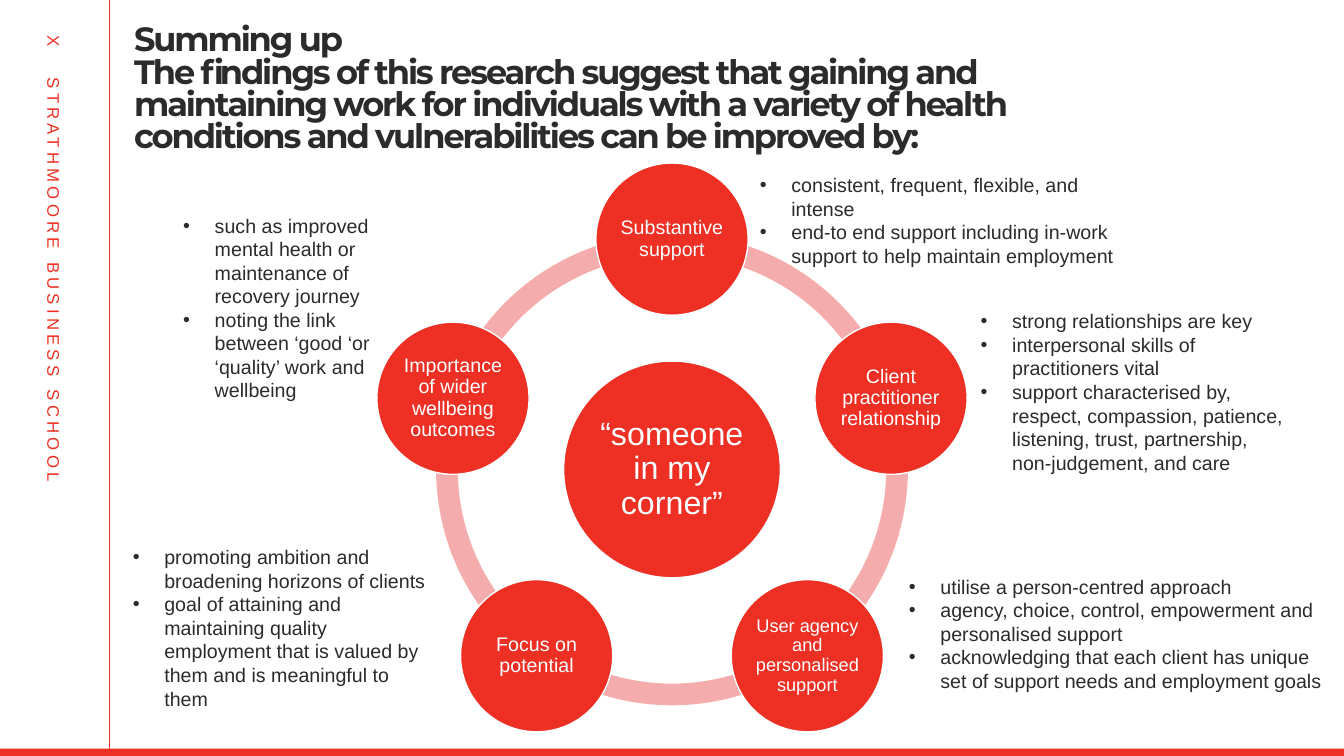
import math
from dataclasses import dataclass

from lxml import etree
from pptx import Presentation
from pptx import util as u
from pptx.dml.color import RGBColor
from pptx.enum import shapes, text
from pptx.oxml import ns

RED = RGBColor(0xED, 0x2F, 0x24)
BRAND_RED = RGBColor(0xEE, 0x30, 0x24)
PINK = RGBColor(0xF4, 0xAD, 0xAC)
WHITE = RGBColor(0xFC, 0xFF, 0xFF)
DARK = RGBColor(0x2B, 0x2B, 0x2B)

WIDTH, HEIGHT = 960, 540
CENTER_X, CENTER_Y = 480, 335.3
ORBIT_RADIUS = 164.5
NODE_SIZE, HUB_SIZE, RING_SIZE = 108.7, 154.8, 337
RING_THICKNESS = 0.046
ANGLE_UNIT = 0.6
BULLET_INDENT = 22.5


@dataclass(frozen=True)
class Factor:
    label: str
    label_size: float
    left: float
    top: float
    width: float
    height: float
    details: tuple[str, ...]


FACTORS = (
    Factor("Substantive support", 14, 535.7, 120.2, 282.2, 113.8, (
        "consistent, frequent, flexible, and intense",
        "end-to end support including in-work support to help maintain employment",
    )),
    Factor("Client practitioner relationship", 14, 693.4, 217.4, 235.4, 147.6, (
        "strong relationships are key",
        "interpersonal skills of practitioners vital",
        "support characterised by, respect, compassion, patience, listening, "
        "trust, partnership, non-judgement, and care",
    )),
    Factor("User agency and personalised support", 13, 642.2, 406.8, 312.5, 113.8, (
        "utilise a person-centred approach",
        "agency, choice, control, empowerment and personalised support",
        "acknowledging that each client has unique set of support needs "
        "and employment goals",
    )),
    Factor("Focus on potential", 14, 87.8, 385.9, 229.7, 147.6, (
        "promoting ambition and broadening horizons of clients",
        "goal of attaining and maintaining quality employment that is valued "
        "by them and is meaningful to them",
    )),
    Factor("Importance of wider wellbeing outcomes", 14, 123.8, 149, 167, 164.9, (
        "such as improved mental health or maintenance of recovery journey",
        "noting the link between ‘good ‘or ‘quality’ work and wellbeing",
    )),
)


def write_text(shape, *lines: str, size: float, color: RGBColor, font: str = "Arial",
               bold: bool = False, align=text.PP_ALIGN.LEFT,
               anchor=text.MSO_ANCHOR.TOP, line_spacing: float | None = None,
               letter_spacing: float = 0, bullets: bool = False,
               tab_stop: float | None = None,
               margins: tuple[float, float, float, float] = (7.2, 3.6, 7.2, 3.6)) -> None:
    frame = shape.text_frame
    frame.word_wrap = True
    frame.vertical_anchor = anchor
    (frame.margin_left, frame.margin_top,
     frame.margin_right, frame.margin_bottom) = map(u.Pt, margins)
    for index, line in enumerate(lines):
        paragraph = frame.add_paragraph() if index else frame.paragraphs[0]
        paragraph.text = line
        paragraph.alignment = align
        if line_spacing:
            paragraph.line_spacing = line_spacing
        properties = paragraph._p.get_or_add_pPr()
        if bullets:
            properties.set("marL", str(u.Pt(BULLET_INDENT)))
            properties.set("indent", str(-u.Pt(BULLET_INDENT)))
            etree.SubElement(properties, ns.qn("a:buFont"), typeface="Arial")
            etree.SubElement(properties, ns.qn("a:buChar"), char="•")
        if tab_stop:
            tabs = etree.SubElement(properties, ns.qn("a:tabLst"))
            etree.SubElement(tabs, ns.qn("a:tab"), pos=str(u.Pt(tab_stop)), algn="l")
        for run in paragraph.runs:
            run.font.name = font
            run.font.size = u.Pt(size)
            run.font.bold = bold
            run.font.color.rgb = color
            if letter_spacing:
                run._r.get_or_add_rPr().set("spc", str(round(letter_spacing * 100)))


def add_box(slide, left: float, top: float, width: float, height: float):
    return slide.shapes.add_textbox(*map(u.Pt, (left, top, width, height)))


def add_filled(slide, kind, left: float, top: float, width: float, height: float,
               fill: RGBColor, outline: RGBColor | None = None):
    shape = slide.shapes.add_shape(kind, *map(u.Pt, (left, top, width, height)))
    shape.shadow.inherit = False
    shape.fill.solid()
    shape.fill.fore_color.rgb = fill
    if outline is None:
        shape.line.fill.background()
    else:
        shape.line.color.rgb = outline
        shape.line.width = u.Pt(1)
    return shape


def add_circle(slide, x: float, y: float, diameter: float, label: str,
               size: float, margin: float) -> None:
    circle = add_filled(slide, shapes.MSO_SHAPE.OVAL, x - diameter / 2,
                        y - diameter / 2, diameter, diameter, RED, WHITE)
    write_text(circle, label, size=size, color=WHITE, align=text.PP_ALIGN.CENTER,
               anchor=text.MSO_ANCHOR.MIDDLE, line_spacing=0.9, margins=(margin,) * 4)


def add_frame(slide) -> None:
    rule = slide.shapes.add_connector(shapes.MSO_CONNECTOR.STRAIGHT,
                                      u.Pt(77.8), u.Pt(0), u.Pt(77.8), u.Pt(HEIGHT))
    rule.line.color.rgb = BRAND_RED
    rule.line.width = u.Pt(0.5)
    etree.SubElement(rule._element.spPr, ns.qn("a:effectLst"))
    school = add_box(slide, -165.6, 211.7, 408.2, 21.6)
    school.rotation = 90
    write_text(school, "X\tSTRATHMOORE BUSINESS SCHOOL", size=12, color=BRAND_RED,
               letter_spacing=3, tab_stop=30)
    add_filled(slide, shapes.MSO_SHAPE.RECTANGLE, -0.5, 534.7, WIDTH + 1, 6.3, RED)
    title = add_box(slide, 95.8, 3.6, 661.7, 99.4)
    write_text(title,
               "Summing up\vThe findings of this research suggest that gaining and "
               "maintaining work for individuals with a variety of health conditions "
               "and vulnerabilities can be improved by:",
               size=24, color=DARK, font="Montserrat", bold=True, line_spacing=0.8,
               letter_spacing=-1.5, margins=(0, 15.1, 0, 0))


def add_cycle(slide) -> None:
    step = 360 / len(FACTORS)
    for index in range(len(FACTORS)):
        start = (270 + index * step) % 360
        arc = add_filled(slide, shapes.MSO_SHAPE.BLOCK_ARC, CENTER_X - RING_SIZE / 2,
                         CENTER_Y - RING_SIZE / 2, RING_SIZE, RING_SIZE, PINK)
        arc.adjustments[0] = start * ANGLE_UNIT
        arc.adjustments[1] = (start + step) % 360 * ANGLE_UNIT
        arc.adjustments[2] = RING_THICKNESS
    add_circle(slide, CENTER_X, CENTER_Y, HUB_SIZE, "“someone in my corner”", 23, 2.2)
    for index, factor in enumerate(FACTORS):
        angle = math.radians(index * step - 90)
        add_circle(slide, CENTER_X + ORBIT_RADIUS * math.cos(angle),
                   CENTER_Y + ORBIT_RADIUS * math.sin(angle),
                   NODE_SIZE, factor.label, factor.label_size, 1.4)
    for factor in FACTORS:
        box = add_box(slide, factor.left, factor.top, factor.width, factor.height)
        write_text(box, *factor.details, size=14, color=DARK, bullets=True)


def main() -> None:
    presentation = Presentation()
    presentation.slide_width = u.Pt(WIDTH)
    presentation.slide_height = u.Pt(HEIGHT)
    slide = presentation.slides.add_slide(presentation.slide_layouts[6])
    add_frame(slide)
    add_cycle(slide)
    presentation.save("out.pptx")


if __name__ == "__main__":
    main()
